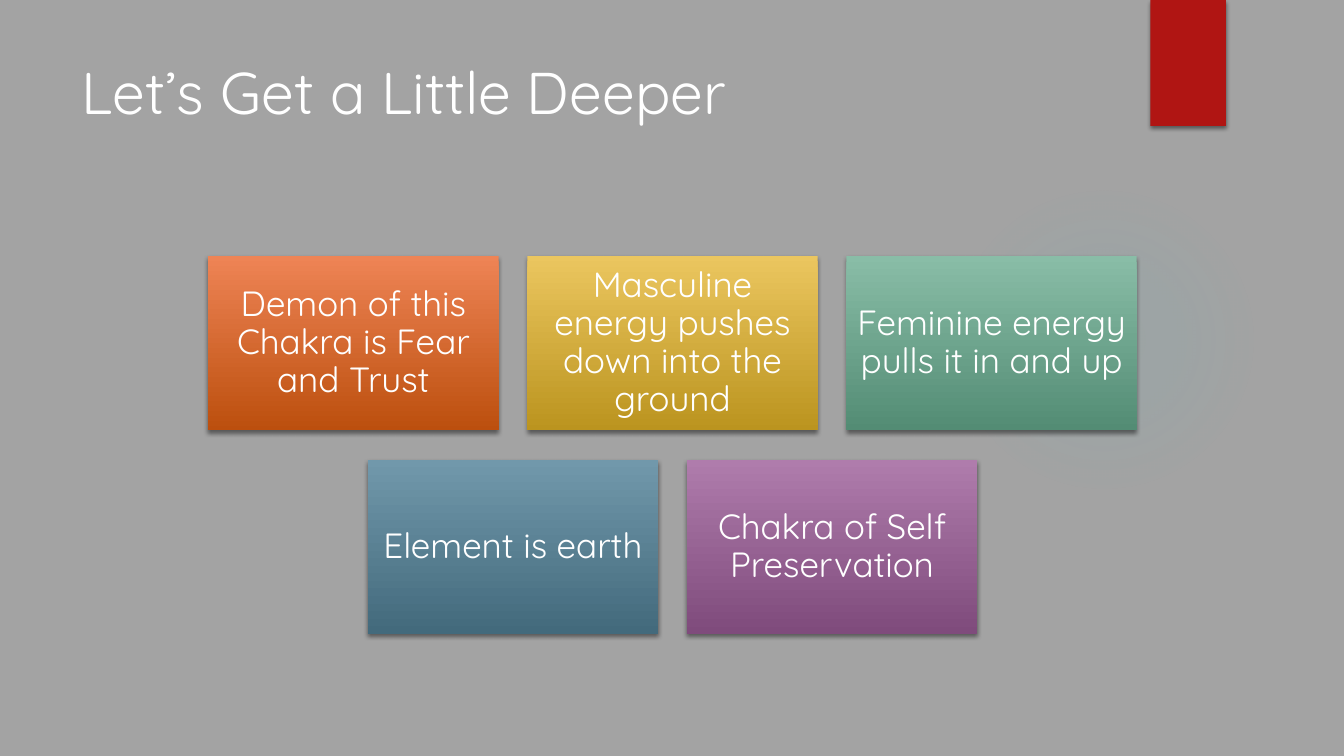
from dataclasses import dataclass

from lxml import etree
from pptx import Presentation
from pptx.dml.color import RGBColor
from pptx.enum.shapes import MSO_SHAPE
from pptx.enum.text import MSO_ANCHOR, PP_ALIGN
from pptx.oxml import parse_xml
from pptx.oxml.ns import nsdecls, qn
from pptx.shapes.autoshape import Shape
from pptx.slide import Slide
from pptx.util import Inches, Pt

RECTANGLE = MSO_SHAPE.RECTANGLE
OVAL = MSO_SHAPE.OVAL
MIDDLE = MSO_ANCHOR.MIDDLE
CENTER = PP_ALIGN.CENTER

FONT = "Quicksand"
WHITE = RGBColor(0xFF, 0xFF, 0xFF)
GRAY = RGBColor(0xA3, 0xA3, 0xA3)
RED = RGBColor(0xB0, 0x15, 0x13)
TEAL = RGBColor(0x50, 0xB9, 0xC1)
BLACK = RGBColor(0, 0, 0)

CARD_WIDTH, CARD_HEIGHT = 2.88, 1.73
PITCH_X, PITCH_Y = 3.165, 2.02
GRID_CENTER, GRID_TOP = 6.67, 2.54


@dataclass(frozen=True)
class Card:
    text: str
    top_color: RGBColor
    bottom_color: RGBColor


CARD_ROWS = [
    [
        Card("Demon of this Chakra is Fear and Trust",
             RGBColor(0xEE, 0x84, 0x55), RGBColor(0xBC, 0x4F, 0x0E)),
        Card("Masculine energy pushes down into the ground",
             RGBColor(0xEB, 0xC6, 0x5F), RGBColor(0xBB, 0x94, 0x1F)),
        Card("Feminine energy pulls it in and up",
             RGBColor(0x89, 0xBD, 0xA7), RGBColor(0x53, 0x8C, 0x74)),
    ],
    [
        Card("Element is earth",
             RGBColor(0x71, 0x98, 0xAB), RGBColor(0x43, 0x6A, 0x7C)),
        Card("Chakra of Self Preservation",
             RGBColor(0xAF, 0x7C, 0xAC), RGBColor(0x7F, 0x4B, 0x7C)),
    ],
]


def add_plain_shape(page: Slide, kind: MSO_SHAPE, left: float, top: float,
                    width: float, height: float) -> Shape:
    shape = page.shapes.add_shape(
        kind, Inches(left), Inches(top), Inches(width), Inches(height))
    shape.shadow.inherit = False
    shape.line.fill.background()
    return shape


def add_drop_shadow(shape: Shape) -> None:
    effects = shape._element.spPr.find(qn("a:effectLst"))
    shadow = etree.SubElement(
        effects, qn("a:outerShdw"), blurRad=str(Pt(3)), dist=str(Pt(2)),
        dir="5400000", rotWithShape="0")
    color = etree.SubElement(shadow, qn("a:srgbClr"), val=str(BLACK))
    etree.SubElement(color, qn("a:alpha"), val="45000")


def add_glow(page: Slide) -> None:
    glow = add_plain_shape(page, OVAL, 9.41, 1.83, 3.08, 3.08)
    stops = "".join(
        f'<a:gs pos="{position * 1000}"><a:srgbClr val="{TEAL}">'
        f'<a:alpha val="{opacity * 1000}"/></a:srgbClr></a:gs>'
        for position, opacity in ((0, 7), (36, 6), (69, 0)))
    gradient = parse_xml(
        f'<a:gradFill {nsdecls("a")}><a:gsLst>{stops}</a:gsLst>'
        '<a:path path="circle"><a:fillToRect l="50000" t="50000" '
        'r="50000" b="50000"/></a:path></a:gradFill>')
    glow._element.spPr.find(qn("a:prstGeom")).addnext(gradient)


def add_ribbon(page: Slide) -> None:
    ribbon = add_plain_shape(page, RECTANGLE, 11.41, 0, 0.75, 1.25)
    ribbon.fill.solid()
    ribbon.fill.fore_color.rgb = RED
    add_drop_shadow(ribbon)


def write_text(shape: Shape, text: str, size: float) -> None:
    frame = shape.text_frame
    frame.word_wrap = True
    para = frame.paragraphs[0]
    para.text = text
    para.font.name = FONT
    para.font.size = Pt(size)
    para.font.color.rgb = WHITE


def add_title(page: Slide) -> None:
    box = page.shapes.add_textbox(
        Inches(0.71), Inches(0.5), Inches(10.29), Inches(1.53))
    write_text(box, "Let’s Get a Little Deeper", 42)


def add_card(page: Slide, card: Card, left: float, top: float) -> None:
    shape = add_plain_shape(page, RECTANGLE, left, top, CARD_WIDTH, CARD_HEIGHT)
    shape.fill.gradient()
    shape.fill.gradient_angle = 270
    colors = (card.top_color, card.bottom_color)
    for position, (stop, color) in enumerate(zip(shape.fill.gradient_stops, colors)):
        stop.position = position
        stop.color.rgb = color
    add_drop_shadow(shape)
    write_text(shape, card.text, 25)
    frame = shape.text_frame
    frame.vertical_anchor = MIDDLE
    frame.margin_left = frame.margin_right = Inches(0.1)
    frame.margin_top = frame.margin_bottom = Inches(0.1)
    para = frame.paragraphs[0]
    para.alignment = CENTER
    para.line_spacing = 0.9


def add_cards(page: Slide) -> None:
    for row, cards in enumerate(CARD_ROWS):
        row_width = (len(cards) - 1) * PITCH_X + CARD_WIDTH
        row_left = GRID_CENTER - row_width / 2
        for column, card in enumerate(cards):
            add_card(page, card, row_left + column * PITCH_X,
                     GRID_TOP + row * PITCH_Y)


def main() -> None:
    deck = Presentation()
    deck.slide_width, deck.slide_height = Inches(13.33), Inches(7.5)
    page = deck.slides.add_slide(deck.slide_layouts[6])
    page.background.fill.solid()
    page.background.fill.fore_color.rgb = GRAY
    add_glow(page)
    add_ribbon(page)
    add_title(page)
    add_cards(page)
    deck.save("out.pptx")


if __name__ == "__main__":
    main()
